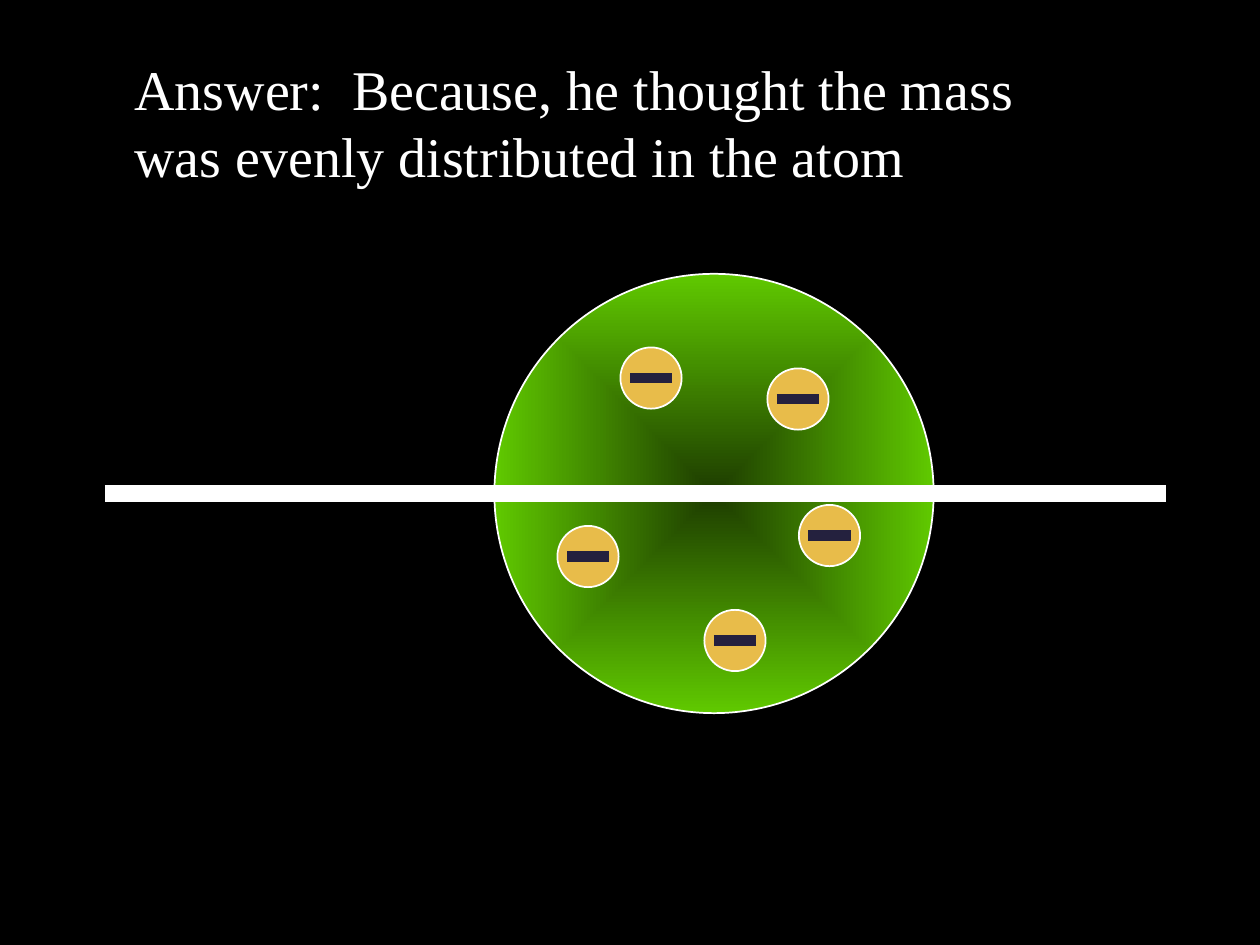
from pptx import Presentation
from pptx.util import Pt
from pptx.dml.color import RGBColor
from pptx.enum.shapes import MSO_SHAPE, MSO_CONNECTOR
from pptx.enum.text import MSO_ANCHOR, MSO_AUTO_SIZE, PP_ALIGN
from pptx.oxml import parse_xml
from pptx.oxml.ns import nsdecls

WHITE, BLACK = "FFFFFF", "000000"
GOLD, NAVY = "E8BC4A", "24213E"
DARK, LIME = "1D3C00", "60C900"


def paint(fill, color):
    fill.solid()
    fill.fore_color.rgb = RGBColor.from_string(color)


def write(frame, text, size=32, font="Times New Roman", color=WHITE):
    frame.word_wrap = True
    frame.auto_size = MSO_AUTO_SIZE.NONE
    frame.vertical_anchor = MSO_ANCHOR.TOP
    para = frame.paragraphs[0]
    para.alignment = PP_ALIGN.LEFT
    run = para.add_run()
    run.text = text
    run.font.size = Pt(size)
    run.font.name = font
    paint(run.font.fill, color)


deck = Presentation()
deck.slide_width, deck.slide_height = Pt(720), Pt(540)
slide = deck.slides.add_slide(deck.slide_layouts[5])
paint(slide.background.fill, BLACK)
shapes = slide.shapes

title = shapes.title
title.left, title.top, title.width, title.height = Pt(69.6), Pt(27.5), Pt(556.5), Pt(85)
write(title.text_frame, "Answer:  Because, he thought the mass was evenly distributed in the atom")

center = (408, 282)
spots = [(372, 216), (474, 306), (336, 318), (456, 228), (420, 366)]

discs = [(center, 251, LIME)] + [(spot, 35, GOLD) for spot in spots]
for (x, y), size, color in discs:
    disc = shapes.add_shape(MSO_SHAPE.OVAL, Pt(x - size / 2), Pt(y - size / 2), Pt(size), Pt(size))
    disc.shadow.inherit = False
    paint(disc.fill, color)
    paint(disc.line.fill, WHITE)
    disc.line.width = Pt(1)

atom = shapes[1]
glow = parse_xml(
    f'<a:gradFill {nsdecls("a")} rotWithShape="0"><a:gsLst>'
    f'<a:gs pos="0"><a:srgbClr val="{DARK}"/></a:gs>'
    f'<a:gs pos="100000"><a:srgbClr val="{LIME}"/></a:gs></a:gsLst>'
    '<a:path path="shape"><a:fillToRect l="50000" t="50000" r="50000" b="50000"/></a:path>'
    '</a:gradFill>')
solid = atom.element.spPr.find("{*}solidFill")
solid.getparent().replace(solid, glow)

reach = 12
minus = [(x - reach, x + reach, y, 6, NAVY) for x, y in spots]
beam = (60, 666, center[1], 10, WHITE)
for left, right, y, width, color in minus + [beam]:
    line = shapes.add_connector(MSO_CONNECTOR.STRAIGHT, Pt(left), Pt(y), Pt(right), Pt(y))
    paint(line.line.fill, color)
    line.line.width = Pt(width)
    line.element.spPr.append(parse_xml(f'<a:effectLst {nsdecls("a")}/>'))

deck.save("out.pptx")
